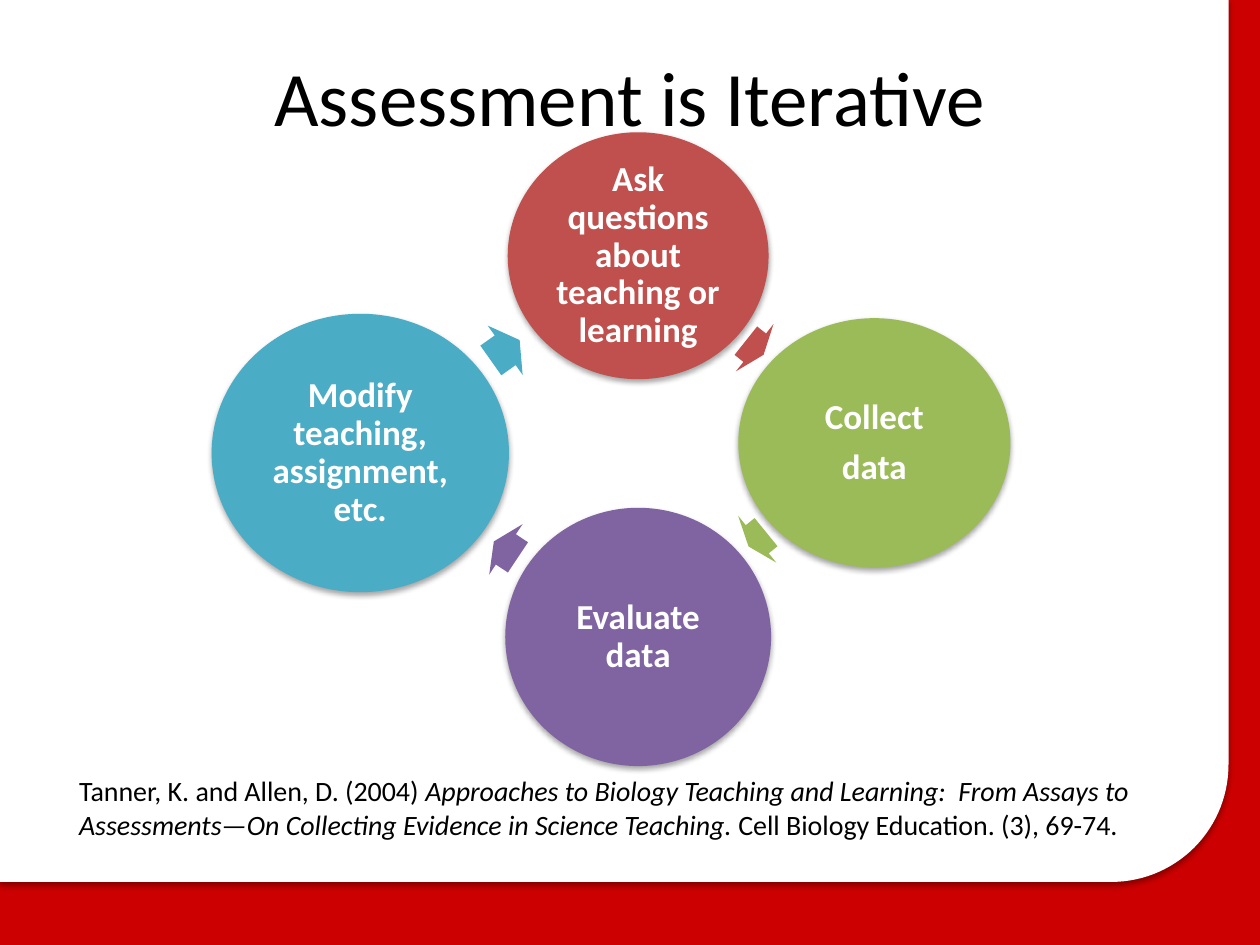
import math
from collections import namedtuple

from lxml import etree
from pptx import Presentation
from pptx.dml.color import RGBColor
from pptx.enum.shapes import MSO_SHAPE
from pptx.enum.text import MSO_ANCHOR, PP_ALIGN
from pptx.oxml import parse_xml
from pptx.util import Inches, Pt

ELLIPSE, ARROW = MSO_SHAPE.OVAL, MSO_SHAPE.RIGHT_ARROW
TOP, MIDDLE = MSO_ANCHOR.TOP, MSO_ANCHOR.MIDDLE
LEFT, CENTER = PP_ALIGN.LEFT, PP_ALIGN.CENTER

# The page is a grid of 100 columns by 75 rows; all boxes are in grid cells
CELL = Inches(0.1)
COLUMNS, ROWS = 100, 75
FONT = "Calibri"
COLOURS = {
    "page": "CC0000", "panel": "FFFFFF", "ink": "000000", "label": "FFFFFF",
    "ask": "C0504D", "collect": "9BBB59", "evaluate": "8064A2", "modify": "4BACC6",
}
SHADOW = (
    '<a:effectLst xmlns:a="http://schemas.openxmlformats.org/drawingml/2006/main">'
    '<a:outerShdw blurRad="40000" dist="23000" dir="5400000" rotWithShape="0">'
    '<a:srgbClr val="000000"><a:alpha val="35000"/></a:srgbClr>'
    "</a:outerShdw></a:effectLst>"
)

Box = namedtuple("Box", "left top width height")
Step = namedtuple("Step", "colour lines x y width height arrow_x arrow_y arrow_width turn")

# Centres are measured from the corner of the cycle's box
STEPS = [
    Step("ask", ["Ask questions about teaching or learning"],
         33.85, 9.8, 20.7, 19.6, 43.1, 17.1, 1.8, 38.5),
    Step("collect", ["Collect", "data"],
         52.6, 24.65, 21.6, 19.8, 43.3, 32.3, 1.8, 140.8),
    Step("evaluate", ["Evaluate data"],
         33.85, 40.05, 21.1, 20.5, 23.35, 33.1, 2.3, 213.5),
    Step("modify", ["Modify teaching, assignment, etc."],
         11.8, 25.45, 23.6, 22.1, 23.3, 17.3, 2.8, 324.7),
]
ARROW_HEIGHT = 4.8


def cells(*numbers):
    return [round(number * CELL) for number in numbers]


def colour(name):
    return RGBColor.from_string(COLOURS[name])


def paint(shape, name, shadow=False):
    shape.fill.solid()
    shape.fill.fore_color.rgb = colour(name)
    shape.line.fill.background()
    shape.shadow.inherit = False
    if shadow:
        properties = shape.fill._xPr
        old = properties.find("{*}effectLst")
        properties.replace(old, parse_xml(etree.tostring(etree.fromstring(SHADOW))))


def write(shape, paragraphs, size, ink="ink", bold=False, align=LEFT, anchor=TOP,
          insets=(0.1, 0.05, 0.1, 0.05), line_spacing=None, space_after=0):
    """Each paragraph is a list of (text, italic) spans."""
    frame = shape.text_frame
    frame.word_wrap = True
    frame.vertical_anchor = anchor
    (frame.margin_left, frame.margin_top,
     frame.margin_right, frame.margin_bottom) = [Inches(inset) for inset in insets]
    for index, spans in enumerate(paragraphs):
        para = frame.add_paragraph() if index else frame.paragraphs[0]
        para.alignment = align
        para.line_spacing = line_spacing
        para.space_after = Pt(space_after)
        for text, italic in spans:
            span = para.add_run()
            span.text = text
            span.font.name, span.font.size = FONT, Pt(size)
            span.font.bold, span.font.italic = bold, italic
            span.font.color.rgb = colour(ink)


def add_centred(page, kind, x, y, width, height):
    return page.shapes.add_shape(
        kind, *cells(x - width / 2, y - height / 2, width, height))


def add_panel(page, box, radius=9.3):
    """White sheet with a rounded lower right corner."""
    right, bottom = box.left + box.width, box.top + box.height
    arc = [(right - radius + radius * math.cos(math.radians(angle)),
            bottom - radius + radius * math.sin(math.radians(angle)))
           for angle in range(0, 91, 3)]
    builder = page.shapes.build_freeform(*cells(box.left, box.top))
    outline = [(right, box.top), *arc, (box.left, bottom)]
    builder.add_line_segments([cells(*point) for point in outline], close=True)
    paint(builder.convert_to_shape(), "panel", shadow=True)


def add_title(page, box):
    shape = page.shapes.add_textbox(*cells(*box))
    write(shape, [[("Assessment is Iterative", False)]], 44, align=CENTER,
          insets=(0.1, 0.09, 0.1, 0.05))


def add_citation(page, box):
    shape = page.shapes.add_textbox(*cells(*box))
    write(shape, [[
        ("Tanner, K. and Allen, D. (2004) ", False),
        ("Approaches to Biology Teaching and Learning:  From Assays to "
         "Assessments—On Collecting Evidence in Science Teaching.", True),
        (" Cell Biology Education. (3), 69-74.", False),
    ]], 16)


def add_cycle(page, box):
    for step in STEPS:
        # Labelled circle
        circle = add_centred(page, ELLIPSE, box.left + step.x, box.top + step.y,
                             step.width, step.height)
        paint(circle, step.colour, shadow=True)
        write(circle, [[(line, False)] for line in step.lines], 20, ink="label",
              bold=True, align=CENTER, anchor=MIDDLE, insets=(0.03,) * 4,
              line_spacing=0.9, space_after=7)
        # Arrow to the next circle
        arrow = add_centred(page, ARROW, box.left + step.arrow_x,
                            box.top + step.arrow_y, step.arrow_width, ARROW_HEIGHT)
        arrow.adjustments[0], arrow.adjustments[1] = 0.6, 0.5
        arrow.rotation = step.turn
        paint(arrow, step.colour)


def main():
    deck = Presentation()
    deck.slide_width, deck.slide_height = cells(COLUMNS, ROWS)
    page = deck.slides.add_slide(deck.slide_layouts[6])
    page.background.fill.solid()
    page.background.fill.fore_color.rgb = colour("page")
    add_panel(page, Box(0, 0, 97.5, 70))
    add_title(page, Box(5, 3, 90, 12.5))
    add_citation(page, Box(5.3, 60.9, 89.7, 6.4))
    add_cycle(page, Box(16.8, 10.5, 63.4, 50.3))
    deck.save("out.pptx")


if __name__ == "__main__":
    main()
